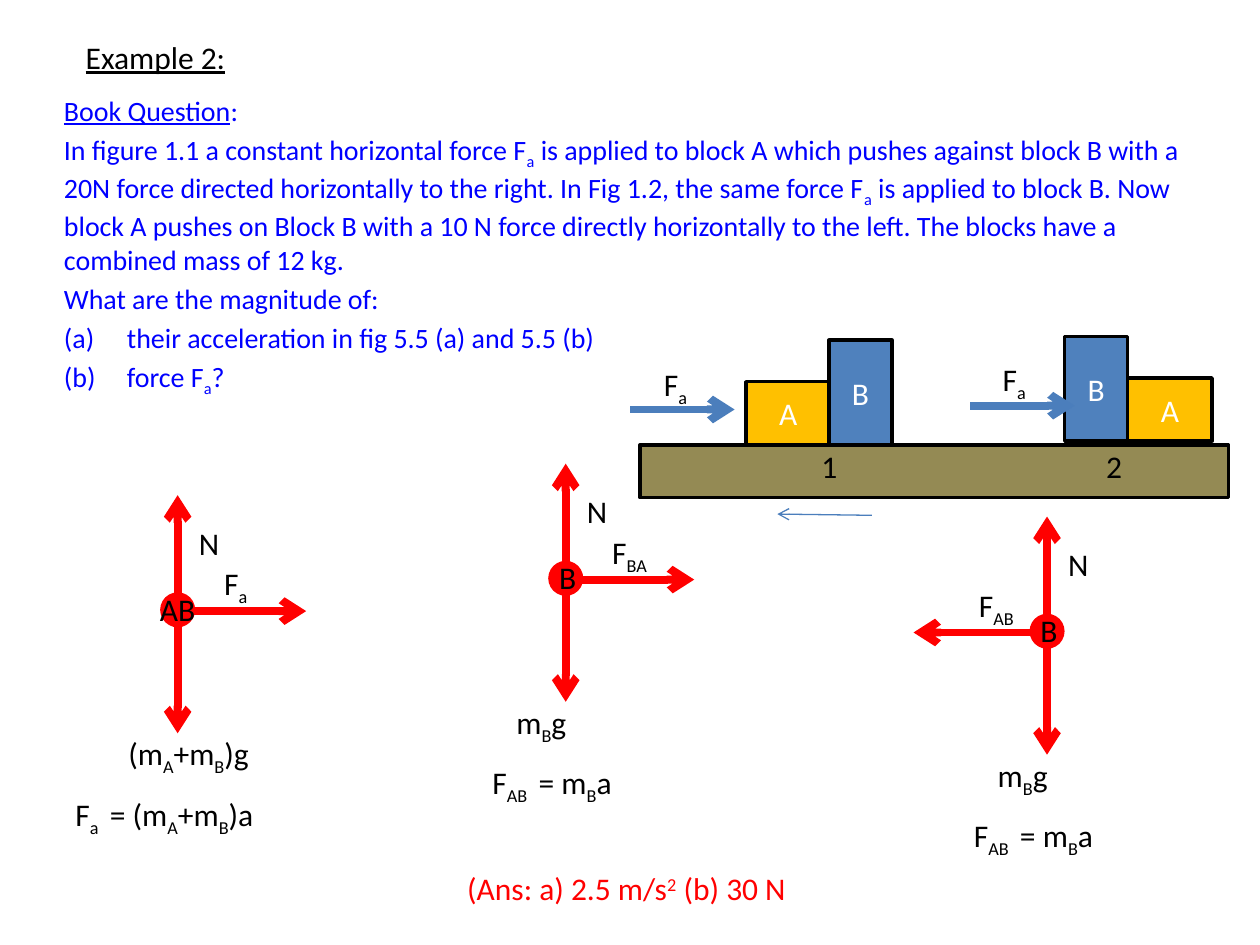
"""Build a physics slide on two pushed blocks with free-body diagrams."""
from lxml import etree
from pptx import Presentation
from pptx.dml.color import RGBColor
from pptx.enum.shapes import MSO_CONNECTOR, MSO_SHAPE
from pptx.enum.text import MSO_ANCHOR, PP_ALIGN
from pptx.oxml.ns import qn
from pptx.util import Inches, Pt

STRAIGHT = MSO_CONNECTOR.STRAIGHT
RECTANGLE, OVAL = MSO_SHAPE.RECTANGLE, MSO_SHAPE.OVAL
LEFT, CENTER = PP_ALIGN.LEFT, PP_ALIGN.CENTER
TOP, MIDDLE = MSO_ANCHOR.TOP, MSO_ANCHOR.MIDDLE
BLACK, WHITE, RED, BLUE = "000000", "FFFFFF", "FF0000", "0000FF"
ORANGE, STEEL, OLIVE, ARROW_BLUE = "FFC000", "4F81BD", "948A54", "4B7EBC"
color = RGBColor.from_string


def write(para, text, ink=BLACK, size=18, shift=-25000, align=LEFT):
    """Fill a paragraph; every second piece between bars is shifted off the baseline."""
    para.alignment = align
    para.font.name = "Calibri"
    para.font.size = Pt(size)
    para.font.color.rgb = color(ink)
    for index, piece in enumerate(text.split("|")):
        span = para.add_run()
        span.text = piece
        if index % 2:
            span._r.get_or_add_rPr().set("baseline", str(shift))


def draw_arrow(x1, y1, x2, y2, ink, width=4.5):
    """Draw a straight arrow with its head at the second point."""
    arrow = page.shapes.add_connector(STRAIGHT, Inches(x1), Inches(y1), Inches(x2), Inches(y2))
    arrow.line.color.rgb = color(ink)
    arrow.line.width = Pt(width)
    etree.SubElement(arrow.line._get_or_add_ln(), qn("a:tailEnd")).set("type", "arrow")
    etree.SubElement(arrow._element.spPr, qn("a:effectLst"))


deck = Presentation()
deck.slide_width, deck.slide_height = Inches(10), Inches(7.5)
page = deck.slides.add_slide(deck.slide_layouts[5])

title = page.shapes.title
title.left, title.top, title.width, title.height = [Inches(v) for v in (0.58, 0.25, 1.32, 0.4)]
title.text_frame.word_wrap = False
title.text_frame.vertical_anchor = TOP
heading = title.text_frame.paragraphs[0]
write(heading, "Example 2:")
heading.font.underline = True

question = page.shapes.add_textbox(Inches(0.41), Inches(0.69), Inches(9.33), Inches(2.44))
question.text_frame.word_wrap = True
question_lines = [
    ("", False),
    ("In figure 1.1 a constant horizontal force F|a| is applied to block A which pushes "
     "against block B with a 20N force directed horizontally to the right. In Fig 1.2, the "
     "same force F|a| is applied to block B. Now block A pushes on Block B with a 10 N force "
     "directly horizontally to the left. The blocks have a combined mass of 12 kg.", False),
    ("What are the magnitude of:", False),
    ("their acceleration in fig 5.5 (a) and 5.5 (b)", True),
    ("force F|a|?", True),
]
for index, (text, numbered) in enumerate(question_lines):
    frame = question.text_frame
    para = frame.add_paragraph() if index else frame.paragraphs[0]
    para.space_before = Pt(3.2)
    if numbered:
        properties = para._p.get_or_add_pPr()
        properties.set("marL", str(Inches(0.5)))
        properties.set("indent", str(Inches(-0.5)))
        numbering = etree.SubElement(properties, qn("a:buAutoNum"))
        numbering.set("type", "alphaLcParenBoth")
    if index == 0:
        span = para.add_run()
        span.text = "Book Question"
        span.font.underline = True
        text = ":"
    write(para, text, BLUE, 16)

blocks = [
    ("A", 5.92, 3.03, 0.67, 0.5, ORANGE),
    ("B", 6.58, 2.7, 0.5, 0.83, STEEL),
    ("", 5.08, 3.53, 4.67, 0.42, OLIVE),
    ("A", 8.95, 3, 0.67, 0.5, ORANGE),
    ("B", 8.45, 2.67, 0.5, 0.83, STEEL),
]
for name, x, y, width, height, fill in blocks:
    block = page.shapes.add_shape(RECTANGLE, Inches(x), Inches(y), Inches(width), Inches(height))
    block.shadow.inherit = False
    block.fill.solid()
    block.fill.fore_color.rgb = color(fill)
    block.line.color.rgb = color(BLACK)
    block.line.width = Pt(2)
    block.text_frame.vertical_anchor = MIDDLE
    if name:
        write(block.text_frame.paragraphs[0], name, WHITE, align=CENTER)

draw_arrow(5, 3.25, 5.83, 3.25, ARROW_BLUE)
draw_arrow(7.7, 3.22, 8.53, 3.22, ARROW_BLUE)
draw_arrow(6.92, 4.09, 6.17, 4.08, ARROW_BLUE, 0.75)

labels = [
    ("F|a|", 5.17, 2.85, 0.5, BLACK, -25000),
    ("F|a|", 7.86, 2.81, 0.5, BLACK, -25000),
    ("1", 6.42, 3.5, 0.33, BLACK, -25000),
    ("2", 8.68, 3.5, 0.33, BLACK, -25000),
    ("(Ans: a) 2.5 m/s|2| (b) 30 N", 3.61, 6.85, 2.77, RED, 30000),
]

diagrams = [
    (1.41, 4.84, 1.02, ("AB", -0.24, 0.48), ("F|a|", 0.27, 0.39),
     ("(m|A|+m|B|)g", 1.19), ("F|a | = (m|A|+m|B|)a", -0.91, 1.67)),
    (4.49, 4.59, 1.02, ("B", -0.15, 0.34), ("F|BA|", 0.27, 0.72),
     ("m|B|g", 0.61), ("F|AB | = m|B|a", -0.68, 1.19)),
    (8.31, 5.01, -1.06, ("B", -0.15, 0.34), ("F|AB|", -0.64, 0.49),
     ("m|B|g", 0.61), ("F|AB | = m|B|a", -0.68, 1.19)),
]
for x, y, reach, body, force, weight, equation in diagrams:
    draw_arrow(x, y, x, y + 0.98, RED)
    draw_arrow(x, y + 0.01, x + reach, y + 0.01, RED)
    draw_arrow(x, y, x, y - 0.91, RED)
    dot = page.shapes.add_shape(
        OVAL, Inches(x - 0.125), Inches(y - 0.125), Inches(0.25), Inches(0.25))
    dot.shadow.inherit = False
    dot.fill.solid()
    dot.fill.fore_color.rgb = color(RED)
    dot.line.color.rgb = color(RED)
    dot.line.width = Pt(2)
    parts = [
        (weight[0], -0.49, 0.94, weight[1]),
        (force[0], force[1], -0.41, force[2]),
        ("N", 0.07, -0.73, 0.36),
        (body[0], body[1], -0.21, body[2]),
        (equation[0], equation[1], 1.42, equation[2]),
    ]
    for text, dx, dy, width in parts:
        labels.append((text, x + dx, y + dy, width, BLACK, -25000))

for text, x, y, width, ink, shift in labels:
    box = page.shapes.add_textbox(Inches(x), Inches(y), Inches(width), Inches(0.4))
    box.text_frame.word_wrap = False
    write(box.text_frame.paragraphs[0], text.rstrip("|"), ink, shift=shift)

deck.save("out.pptx")
